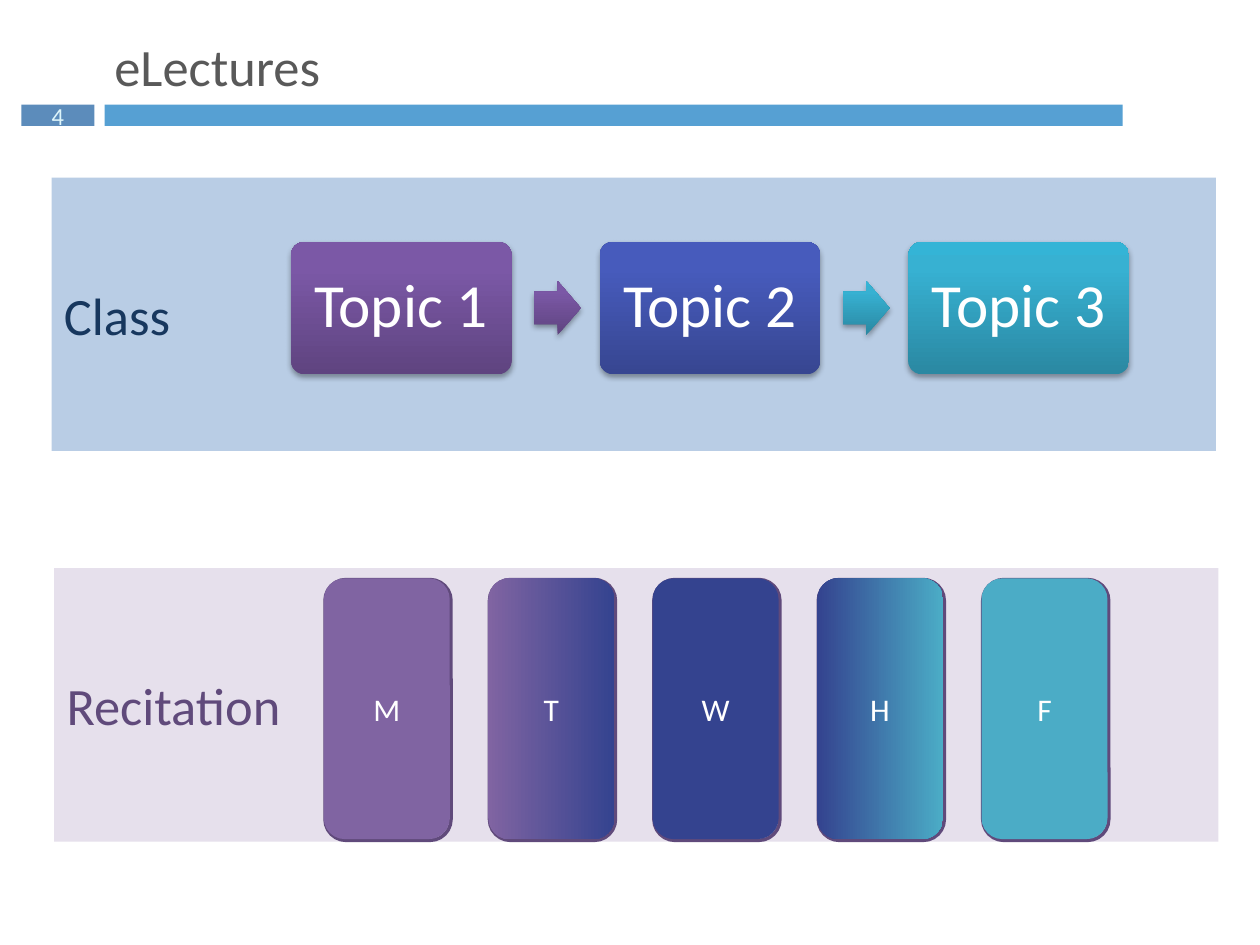
from lxml.etree import SubElement as Sub
from pptx import Presentation
from pptx.dml.color import RGBColor
from pptx.enum.shapes import MSO_SHAPE as Kind
from pptx.enum.text import MSO_ANCHOR as Anchor, PP_ALIGN as Align
from pptx.oxml.ns import qn
from pptx.util import Inches, Pt


def color(code):
    return RGBColor.from_string(code)


class Deck:
    """Holds the font and the current slide, and draws each kind of element."""

    font = "Calibri"

    def __init__(self):
        self.prs = Presentation()
        self.prs.slide_width, self.prs.slide_height = Inches(10), Inches(7.5)
        self.slide = self.prs.slides.add_slide(self.prs.slide_layouts[6])

    def shape(self, kind, box, fill=None, line=None, angle=0):
        item = self.slide.shapes.add_shape(kind, *map(Inches, box))
        item.shadow.inherit = False
        if fill is None:
            item.fill.background()
        elif isinstance(fill, str):
            item.fill.solid()
            item.fill.fore_color.rgb = color(fill)
        else:
            self.blend(item, fill, angle)
        if line:
            item.line.color.rgb = color(line)
            item.line.width = Pt(2)
        else:
            item.line.fill.background()
        return item

    def blend(self, item, stops, angle):
        item.fill.gradient()
        item.fill.gradient_angle = angle
        group = item._element.spPr.find(qn("a:gradFill")).find(qn("a:gsLst"))
        for old in list(group):
            group.remove(old)
        for spot, code in stops:
            stop = Sub(group, qn("a:gs"), pos=str(spot * 1000))
            Sub(stop, qn("a:srgbClr"), val=code)

    def shade(self, item):
        effect = item._element.spPr.find(qn("a:effectLst"))
        drop = Sub(effect, qn("a:outerShdw"), blurRad="40000", dist="23000",
                   dir="5400000", rotWithShape="0")
        tint = Sub(drop, qn("a:srgbClr"), val="000000")
        Sub(tint, qn("a:alpha"), val="35000")

    def label(self, item, text, size, code, align=Align.CENTER, anchor=Anchor.MIDDLE):
        frame = item.text_frame
        frame.word_wrap = True
        frame.vertical_anchor = anchor
        para = frame.paragraphs[0]
        para.text = text
        para.alignment = align
        para.font.name = self.font
        para.font.size = Pt(size)
        para.font.color.rgb = color(code)
        return frame

    def title(self, text, box):
        item = self.slide.shapes.add_textbox(*map(Inches, box))
        self.label(item, text, 30, "595959", Align.LEFT, Anchor.TOP)

    def number(self, text, box):
        item = self.shape(Kind.RECTANGLE, box, "5C8CBB")
        frame = self.label(item, text, 14, "DEF5FA")
        frame.word_wrap = False
        frame.margin_left = frame.margin_right = Inches(0.08)
        frame.margin_top = frame.margin_bottom = Inches(0.04)

    def band(self, text, left, top, fill, code):
        item = self.shape(Kind.RECTANGLE, (left, top, 9.24, 2.17), fill)
        self.label(item, text, 30, code, Align.LEFT)

    def topic(self, text, left, fill):
        item = self.shape(Kind.ROUNDED_RECTANGLE, (left, 1.92, 1.75, 1.05), fill, angle=90)
        item.adjustments[0] = 0.1
        self.shade(item)
        frame = self.label(item, text, 35, "FFFFFF")
        frame.paragraphs[0].line_spacing = 0.9

    def arrow(self, left, fill):
        item = self.shape(Kind.RIGHT_ARROW, (left, 2.23, 0.37, 0.43), fill, angle=90)
        item.adjustments[0] = 0.6
        self.shade(item)

    def day(self, text, left, fill):
        kind = Kind.FLOWCHART_ALTERNATE_PROCESS
        self.shape(kind, (left + 0.01, 4.6, 1, 2.07), line="604A7B")
        item = self.shape(kind, (left, 4.59, 1, 2.07), fill)
        self.label(item, text, 18, "FFFFFF")


def main():
    deck = Deck()
    deck.shape(Kind.RECTANGLE, (0.83, 0.83, 8.08, 0.17), "56A0D3")
    deck.number("4", (0.17, 0.83, 0.58, 0.17))
    deck.title("eLectures", (0.81, 0.22, 9.1, 0.67))

    deck.band("Class", 0.41, 1.41, "B9CDE5", "17375E")
    plum = [(0, "5F4480"), (80, "7B58A6"), (100, "7C57A8")]
    blue = [(0, "374691"), (80, "475BBC"), (100, "455ABF")]
    teal = [(0, "2A88A2"), (80, "37B1D2"), (100, "34B4D6")]
    for i, fill in enumerate((plum, blue, teal)):
        deck.topic(f"Topic {i + 1}", 2.31 + 2.45 * i, fill)
    for i, fill in enumerate((plum, teal)):
        deck.arrow(4.24 + 2.45 * i, fill)

    deck.band("Recitation", 0.43, 4.51, "E6E0EC", "604A7B")
    first, mid, last = "8064A2", "34438F", "4BACC6"
    fills = (first, [(0, first), (100, mid)], mid, [(0, mid), (100, last)], last)
    for i, (name, fill) in enumerate(zip("MTWHF", fills)):
        deck.day(name, 2.57 + 5.22 * i / 4, fill)

    deck.prs.save("out.pptx")


if __name__ == "__main__":
    main()
